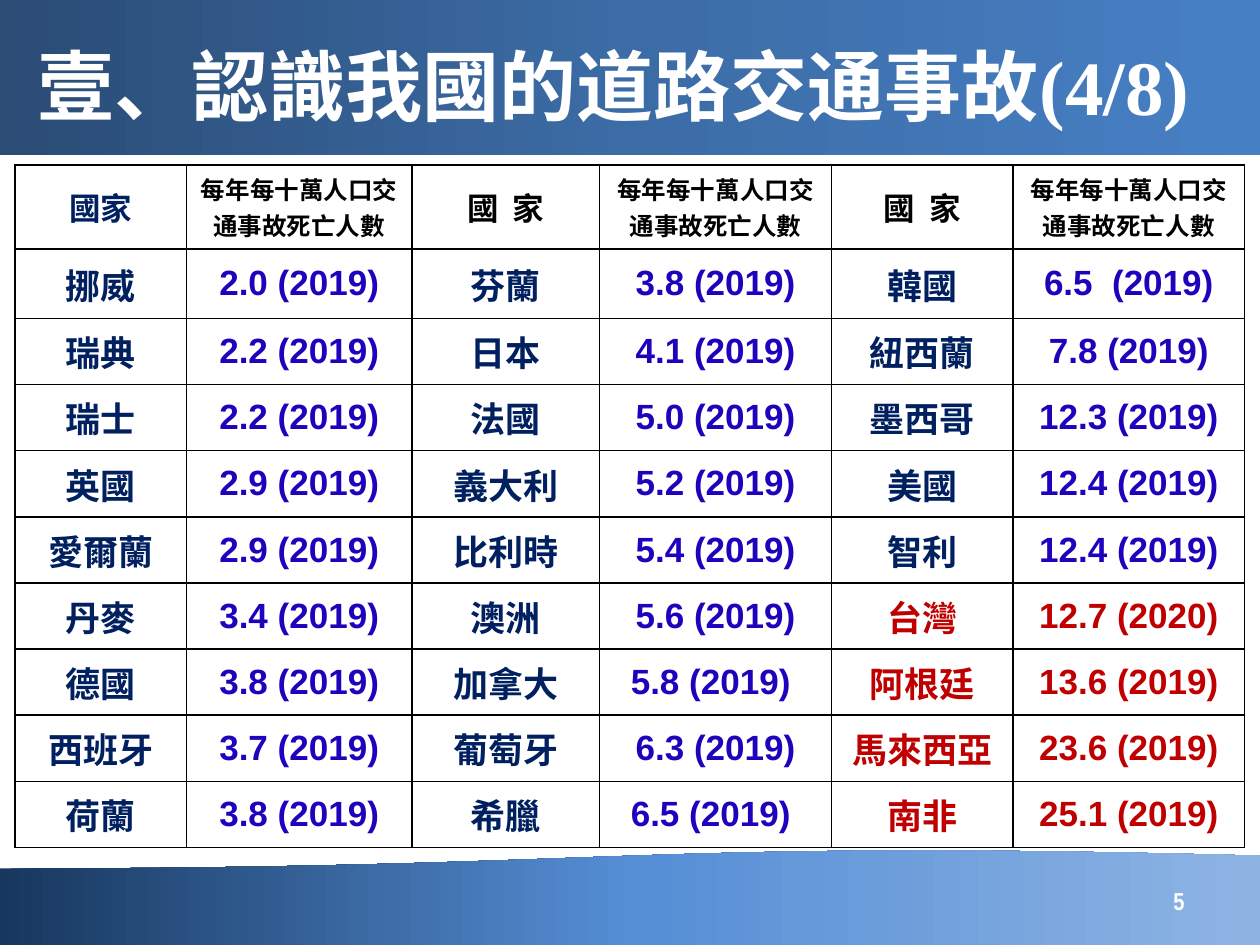
from lxml import etree
from pptx import Presentation
from pptx.dml.color import RGBColor
from pptx.enum.shapes import MSO_SHAPE
from pptx.enum.text import MSO_ANCHOR, MSO_AUTO_SIZE, PP_ALIGN
from pptx.oxml.ns import qn
from pptx.util import Inches, Pt

RECTANGLE, WAVE = MSO_SHAPE.RECTANGLE, MSO_SHAPE.FLOWCHART_DOCUMENT
LEFT, CENTER, RIGHT = PP_ALIGN.LEFT, PP_ALIGN.CENTER, PP_ALIGN.RIGHT
MIDDLE = MSO_ANCHOR.MIDDLE
NO_AUTOFIT = MSO_AUTO_SIZE.NONE

BLACK = RGBColor(0x00, 0x00, 0x00)
WHITE = RGBColor(0xFF, 0xFF, 0xFF)
NAVY = RGBColor(0x00, 0x20, 0x60)
BLUE = RGBColor(0x1E, 0x03, 0xBD)
RED = RGBColor(0xC0, 0x00, 0x00)
HEADER_GRADIENT = ("2A4C75", "3C6CA6", "4780C5")
FOOTER_GRADIENT = ("17375E", "558ED5", "8EB4E3")

CJK, ARIAL = "Noto Sans CJK SC", "Arial"
NARROW, TIMES = "Arial Narrow", "Times New Roman"

TITLE, PAGE_COUNT, PAGE_NUMBER = "壹、認識我國的道路交通事故", "(4/8)", "5"
RATE_HEADING = "每年每十萬人口交通事故死亡人數"
HEADINGS = ["國家", RATE_HEADING, "國  家", RATE_HEADING, "國  家", RATE_HEADING]
RATES = [
    ["挪威", "2.0 (2019)", "芬蘭", "3.8 (2019)", "韓國", "6.5  (2019)"],
    ["瑞典", "2.2 (2019)", "日本", "4.1 (2019)", "紐西蘭", "7.8 (2019)"],
    ["瑞士", "2.2 (2019)", "法國", "5.0 (2019)", "墨西哥", "12.3 (2019)"],
    ["英國", "2.9 (2019)", "義大利", "5.2 (2019)", "美國", "12.4 (2019)"],
    ["愛爾蘭", "2.9 (2019)", "比利時", "5.4 (2019)", "智利", "12.4 (2019)"],
    ["丹麥", "3.4 (2019)", "澳洲", "5.6 (2019)", "台灣", "12.7 (2020)"],
    ["德國", "3.8 (2019)", "加拿大", "5.8 (2019) ", "阿根廷", "13.6 (2019)"],
    ["西班牙", "3.7 (2019)", "葡萄牙", "6.3 (2019)", "馬來西亞", "23.6 (2019)"],
    ["荷蘭", "3.8 (2019)", "希臘", "6.5 (2019) ", "南非", "25.1 (2019)"],
]
HIGHLIGHTED = {"台灣", "阿根廷", "馬來西亞", "南非"}
COLUMN_WIDTHS = [1.36, 1.79, 1.49, 1.84, 1.44, 1.84]
TALL_ROW, TABLE_HEIGHT = 0.55, 5.3


def add_text(frame, text, *, size, color, font=CJK, align=CENTER):
    """Append a bold span to the first paragraph of a text frame."""
    para = frame.paragraphs[0]
    para.alignment = align
    span = para.add_run()
    span.text = text
    span.font.size, span.font.bold = Pt(size), True
    span.font.color.rgb = color
    span.font.name = font
    latin = span.font.element.find(qn("a:latin")) if hasattr(span.font, "element") \
        else span.text and para.runs[-1].font.name and None
    if latin is None:
        latin = para.runs[-1].font and frame.paragraphs[0].runs[-1]
    properties = para.runs[-1]._r.get_or_add_rPr()
    east_asian = etree.Element(qn("a:ea"), typeface=font)
    properties.find(qn("a:latin")).addnext(east_asian)


def add_band(page, preset, top, height, colors, angle):
    band = page.shapes.add_shape(preset, 0, Inches(top), Inches(10), Inches(height))
    band.shadow.inherit = False
    band.line.fill.background()
    band.fill.gradient()
    band.fill.gradient_angle = angle
    stops = band.element.spPr.find(qn("a:gradFill")).find(qn("a:gsLst"))
    for stop in list(stops):
        stops.remove(stop)
    for index, color in enumerate(colors):
        stop = etree.SubElement(stops, qn("a:gs"), pos=str(index * 50000))
        etree.SubElement(stop, qn("a:srgbClr"), val=color)
    return band


def add_borders(cell):
    properties = cell._tc.get_or_add_tcPr()
    for side in ("lnL", "lnR", "lnT", "lnB"):
        line = etree.SubElement(properties, qn(f"a:{side}"), w=str(Pt(1)))
        fill = etree.SubElement(line, qn("a:solidFill"))
        etree.SubElement(fill, qn("a:srgbClr"), val=str(BLACK))


def cell_format(row, column, country):
    """Choose size, colour and font from a cell's place and its country."""
    is_rate = column % 2 == 1
    if row == 0:
        return dict(size=14 if is_rate else 18, color=BLACK if column else NAVY)
    if country in HIGHLIGHTED:
        color = RED
    else:
        color = BLUE if is_rate else NAVY
    return dict(size=20, color=color, font=ARIAL if is_rate else CJK)


def add_rate_table(page):
    rows = [HEADINGS] + RATES
    table = page.shapes.add_table(
        len(rows), len(HEADINGS), Inches(0.12), Inches(1.31),
        Inches(sum(COLUMN_WIDTHS)), Inches(TABLE_HEIGHT)).table
    table.first_row = table.horz_banding = False
    for column, width in zip(table.columns, COLUMN_WIDTHS):
        column.width = Inches(width)
    normal_row = (TABLE_HEIGHT - 2 * TALL_ROW) / (len(rows) - 2)
    for r, values in enumerate(rows):
        table.rows[r].height = Inches(TALL_ROW if r < 2 else normal_row)
        for c, text in enumerate(values):
            cell = table.cell(r, c)
            add_borders(cell)
            cell.fill.background()
            cell.vertical_anchor = MIDDLE
            country = values[c - c % 2]
            add_text(cell.text_frame, text, **cell_format(r, c, country))


def add_title(page):
    title = page.shapes.title
    title.left, title.top = Inches(0.2), Inches(0.21)
    title.width, title.height = Inches(9.69), Inches(0.93)
    frame = title.text_frame
    frame.auto_size, frame.vertical_anchor = NO_AUTOFIT, MIDDLE
    add_text(frame, TITLE, size=44, color=WHITE, align=LEFT)
    add_text(frame, PAGE_COUNT, size=44, color=WHITE, font=TIMES, align=LEFT)
    title.element.getparent().append(title.element)  # in front of the header band


def add_page_number(page):
    box = page.shapes.add_textbox(Inches(7.17), Inches(6.95), Inches(2.33), Inches(0.4))
    frame = box.text_frame
    frame.word_wrap, frame.vertical_anchor = True, MIDDLE
    add_text(frame, PAGE_NUMBER, size=14, color=WHITE, font=NARROW, align=RIGHT)


def main():
    deck = Presentation()
    deck.slide_width, deck.slide_height = Inches(10), Inches(7.5)
    page = deck.slides.add_slide(deck.slide_layouts[5])
    footer = add_band(page, WAVE, 6.74, 0.77, FOOTER_GRADIENT, 180)
    footer.rotation = 180
    add_band(page, RECTANGLE, 0, 1.23, HEADER_GRADIENT, 0)
    add_rate_table(page)
    add_title(page)
    add_page_number(page)
    deck.save("out.pptx")


if __name__ == "__main__":
    main()
